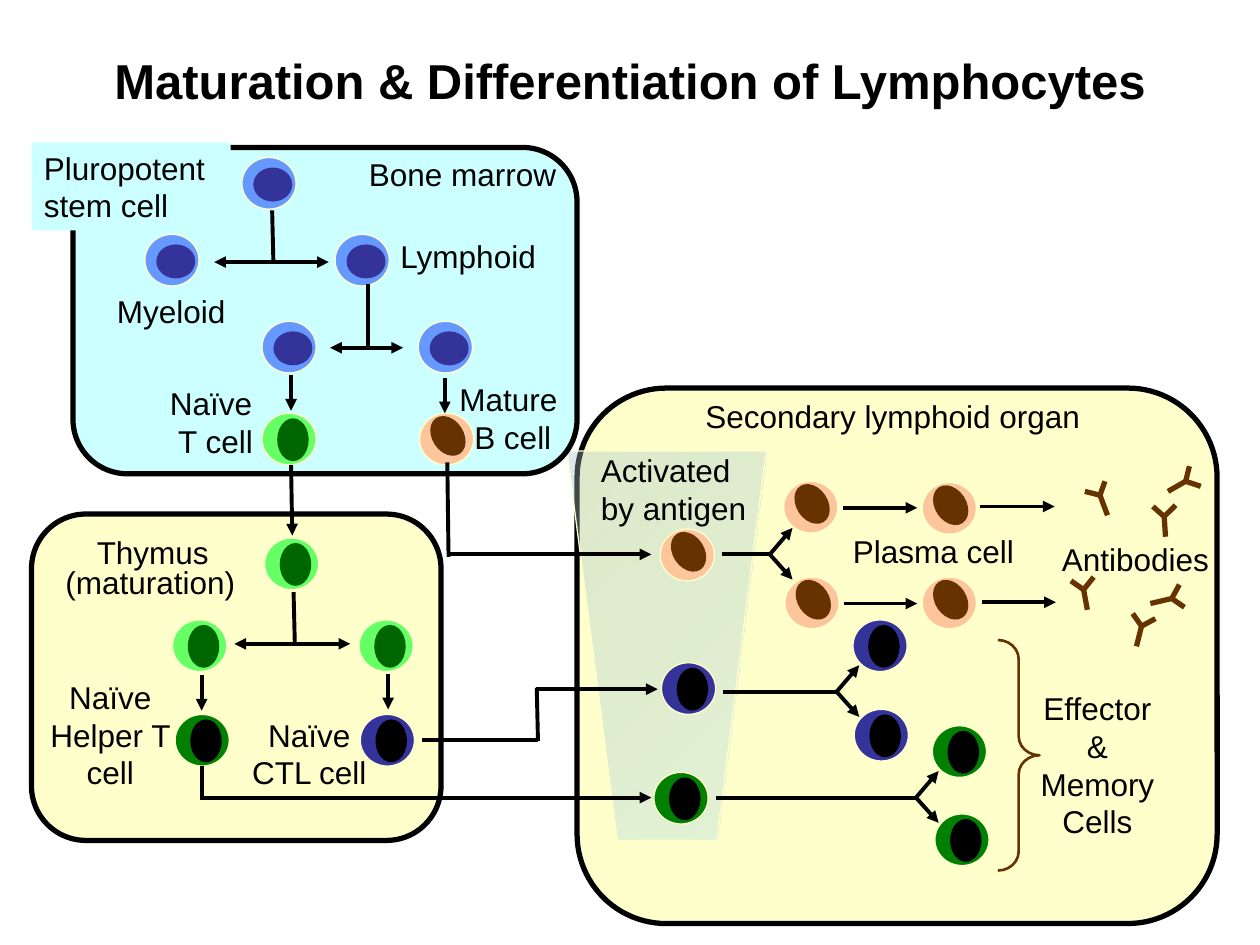
from pptx import Presentation
from pptx.dml.color import RGBColor
from pptx.enum.shapes import MSO_CONNECTOR as CON, MSO_SHAPE as SHP
from pptx.enum.text import MSO_ANCHOR as ANC, MSO_AUTO_SIZE as AUTO, PP_ALIGN as AL
from pptx.oxml.ns import qn
from pptx.util import Inches, Pt
from lxml.etree import SubElement

rgb = RGBColor.from_string

deck = Presentation()
deck.slide_width, deck.slide_height = Inches(10), Inches(7.5)
slide = deck.slides.add_slide(deck.slide_layouts[5])
shapes = slide.shapes


def draw(kind, box, fill=None, edge=None, width=0.75):
    shape = shapes.add_shape(kind, *map(Inches, box))
    shape.shadow.inherit = False
    if fill:
        shape.fill.solid()
        shape.fill.fore_color.rgb = rgb(fill)
    else:
        shape.fill.background()
    if edge:
        shape.line.color.rgb = rgb(edge)
        shape.line.width = Pt(width)
    else:
        shape.line.fill.background()
    return shape


def link(ends, tips=(), color="000000", width=2.25):
    line = shapes.add_connector(CON.STRAIGHT, *map(Inches, ends))
    line.line.color.rgb = rgb(color)
    line.line.width = Pt(width)
    props = line._element.spPr
    for tip in tips:
        SubElement(props.find(qn("a:ln")), qn("a:" + tip), type="triangle")
    SubElement(props, qn("a:effectLst"))


# Title
title = shapes.title
title.left, title.top, title.width, title.height = map(Inches, (0.5, 0.33, 9, 0.61))
frame = title.text_frame
frame.text = "Maturation & Differentiation of Lymphocytes"
frame.vertical_anchor = ANC.MIDDLE
frame.paragraphs[0].alignment = AL.CENTER
font = frame.paragraphs[0].runs[0].font
font.name, font.size, font.bold = "Arial", Pt(28), True
font.color.rgb = rgb("000000")

# Secondary lymphoid organ and its activation zone
draw(SHP.ROUNDED_RECTANGLE, (4.58, 3.08, 5.08, 4.25), "FFFFCC", "000000", 3)
path = shapes.build_freeform(Inches(4.5), Inches(3.58))
path.add_line_segments([(Inches(x), Inches(y)) for x, y in
                        ((4.9, 6.67), (5.69, 6.67), (6.08, 3.58))])
zone = path.convert_to_shape()
zone.shadow.inherit = False
zone.fill.gradient()
zone.fill.gradient_angle = 315
for stop, color, alpha in zip(zone.fill.gradient_stops,
                              ("A4C4C7", "BBE0E3"), ("37000", "42000")):
    stop.color.rgb = rgb(color)
    tint = zone._element.findall(".//" + qn("a:srgbClr"))[-1]
    SubElement(tint, qn("a:alpha"), val=alpha)
zone.line.color.rgb = rgb("FFFFCC")
zone.line.width = Pt(0.75)

# Thymus and bone marrow
draw(SHP.ROUNDED_RECTANGLE, (0.25, 4.08, 3.25, 2.59), "FFFFCC", "000000", 3)
draw(SHP.ROUNDED_RECTANGLE, (0.58, 1.17, 4, 2.59), "CCFFFF", "000000", 3)

# Cells: body, nucleus, nucleus box within the cell, turn, places
upright = (0.12, 0.04, 0.25, 0.34)
cells = [
    ("6699FF", "333399", (0.09, 0.08, 0.31, 0.27), 0,  # stem cells
     [(1.92, 1.25), (1.15, 1.86), (2.66, 1.86), (2.08, 2.55), (3.32, 2.55)]),
    ("66FF66", "006600", upright, 0,  # T cells
     [(2.08, 3.28), (2.1, 4.27), (1.37, 4.92), (2.85, 4.92)]),
    ("FDC59B", "663300", (0.1, 0.01, 0.25, 0.34), 326.6,  # B cells
     [(3.33, 3.28), (5.24, 4.2), (6.22, 3.82), (6.23, 4.58), (7.32, 3.83), (7.32, 4.58)]),
    ("333399", "000000", upright, 0,  # CTL cells
     [(2.86, 5.67), (5.25, 5.26), (6.77, 4.92), (6.78, 5.63)]),
    ("008000", "000000", upright, 0,  # helper T cells
     [(1.39, 5.67), (5.19, 6.13), (7.4, 5.76), (7.42, 6.46)]),
]
for body, core, (dx, dy, w, h), turn, spots in cells:
    for x, y in spots:
        draw(SHP.OVAL, (x, y, 0.43, 0.41), body, "FFFFCC")
        draw(SHP.OVAL, (x + dx, y + dy, w, h), core).rotation = turn

# Labels
labels = [
    ("Activated by antigen", 4.67, 3.53, 1.42, 0.7, AL.LEFT),
    ("Bone marrow", 2.83, 1.18, 2, 0.4, AL.LEFT),
    ("Thymus", 0.67, 4.18, 2, 0.4, AL.LEFT),
    ("(maturation)", 0.42, 4.42, 1.58, 0.4, AL.LEFT),
    ("Secondary lymphoid organ", 5.5, 3.1, 3.92, 0.4, AL.LEFT),
    ("Pluropotent\vstem cell", 0.25, 1.13, 1.58, 0.7, AL.LEFT),
    ("Myeloid", 0.83, 2.27, 1.08, 0.4, AL.LEFT),
    ("Lymphoid", 3.08, 1.83, 1.5, 0.4, AL.LEFT),
    ("Naïve \vT cell", 1.17, 3, 1.08, 0.7, AL.CENTER),
    ("Mature \vB cell", 3.53, 2.97, 1.08, 0.7, AL.CENTER),
    ("Naïve\vHelper T cell", 0.25, 5.33, 1.25, 1, AL.CENTER),
    ("Naïve\vCTL cell", 1.83, 5.63, 1.25, 0.7, AL.CENTER),
    ("Plasma cell", 6.67, 4.17, 1.58, 0.4, AL.LEFT),
    ("Antibodies", 8.33, 4.24, 1.5, 0.4, AL.LEFT),
    ("Effector\v&\vMemory\vCells", 7.92, 5.42, 1.58, 1.3, AL.CENTER),
]
for text, x, y, w, h, align in labels:
    box = shapes.add_textbox(*map(Inches, (x, y, w, h)))
    if text.startswith("Pluropotent"):
        box.fill.solid()
        box.fill.fore_color.rgb = rgb("CCFFFF")
    frame = box.text_frame
    frame.word_wrap = True
    frame.auto_size = AUTO.SHAPE_TO_FIT_TEXT
    frame.text = text
    para = frame.paragraphs[0]
    para.alignment = align
    for run in para.runs:
        run.font.name, run.font.size = "Arial", Pt(18)
        run.font.color.rgb = rgb("000000")

# Plain stems
for ends in [
    (2.16, 1.67, 2.17, 2.08), (2.92, 2.25, 2.92, 2.75), (2.33, 4.7, 2.34, 5.11),
    (1.6, 6.08, 1.6, 6.33), (3.56, 4.42, 3.55, 3.67), (4.26, 5.46, 4.27, 5.88),
    (3.35, 5.87, 4.27, 5.87),
]:
    link(ends)

# Arrows with two heads
for ends in [(1.7, 2.08, 2.61, 2.08), (2.62, 2.76, 3.2, 2.76), (1.86, 5.11, 2.78, 5.11)]:
    link(ends, ("headEnd", "tailEnd"))

# Arrows with one head
for ends in [
    (2.31, 2.98, 2.31, 3.26), (3.53, 3, 3.53, 3.28), (2.31, 3.69, 2.32, 4.25),
    (1.6, 5.36, 1.6, 5.64), (3.08, 5.35, 3.08, 5.63), (1.59, 6.33, 5.17, 6.33),
    (3.57, 4.4, 5.17, 4.4), (4.25, 5.47, 5.22, 5.47), (6.7, 4.79, 7.28, 4.79),
    (6.69, 4.03, 7.28, 4.03), (7.79, 4.78, 8.38, 4.78), (7.78, 4.02, 8.37, 4.02),
]:
    link(ends, ("tailEnd",))

# Forks: start, split point, height
for start, x, y in [(5.73, 6.11, 4.4), (5.74, 6.64, 5.49), (5.68, 7.27, 6.33)]:
    link((start, y, x, y))
    for rise in (-0.21, 0.2):
        link((x, y, x + 0.18, y + rise), ("tailEnd",))

# Antibodies: hub, then the tips of two arms and the stem
for hub, *ends in [
    ((8.73, 3.93), (8.61, 3.9), (8.77, 3.82), (8.79, 4.09)),
    ((9.24, 4.1), (9.15, 4.02), (9.33, 4.01), (9.25, 4.26)),
    ((9.41, 3.82), (9.44, 3.7), (9.53, 3.86), (9.27, 3.9)),
    ((8.6, 4.68), (8.5, 4.61), (8.68, 4.58), (8.63, 4.84)),
    ((9.06, 4.97), (8.99, 4.87), (9.17, 4.91), (9.02, 5.13)),
    ((9.3, 4.75), (9.36, 4.64), (9.4, 4.82), (9.13, 4.79)),
]:
    for end in ends:
        link((*hub, *end), color="663300", width=3)

# Brace
brace = draw(SHP.RIGHT_BRACE, (7.92, 5.08, 0.33, 1.83), None, "663300", 1.5)
brace.adjustments[0] = 0.46

deck.save("out.pptx")
